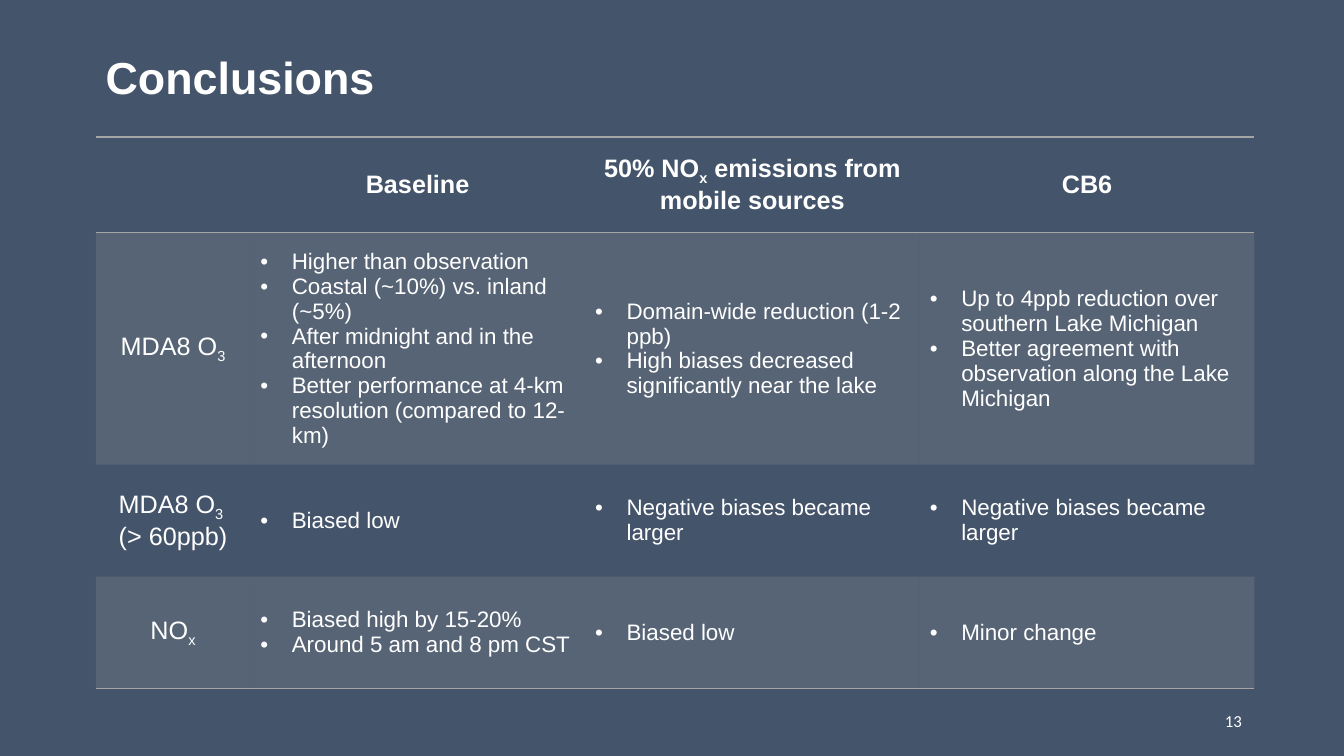
from lxml import etree
from pptx import Presentation
from pptx.dml.color import RGBColor
from pptx.enum.text import MSO_ANCHOR, PP_ALIGN
from pptx.oxml.ns import qn
from pptx.util import Pt

MIDDLE = MSO_ANCHOR.MIDDLE
LEFT, CENTER, RIGHT = PP_ALIGN.LEFT, PP_ALIGN.CENTER, PP_ALIGN.RIGHT
COLORS = {"background": "44546A", "text": "FFFFFF", "accent": "A5A5A5"}
NO_STYLE_NO_GRID = "{2D5ABB26-0587-4C30-8999-92F81FD0307C}"
BULLET_INDENT = 22.5
BAND_OPACITY = 20

COLUMN_WIDTHS = [110.4, 239.1, 239.1, 239.1]
ROW_HEIGHTS = [68.4, 165.6, 79.9, 79.9]
# Text between underscores is set as a subscript.
FINDINGS = [
    [[], ["Baseline"], ["50% NO_x_ emissions from mobile sources"], ["CB6"]],
    [
        ["MDA8 O_3_"],
        [
            "Higher than observation",
            "Coastal (~10%) vs. inland (~5%)",
            "After midnight and in the afternoon",
            "Better performance at 4-km resolution (compared to 12-km)",
        ],
        [
            "Domain-wide reduction (1-2 ppb)",
            "High biases decreased significantly near the lake",
        ],
        [
            "Up to 4ppb reduction over southern Lake Michigan",
            "Better agreement with observation along the Lake Michigan",
        ],
    ],
    [
        ["MDA8 O_3 _", "(> 60ppb)"],
        ["Biased low"],
        ["Negative biases became larger"],
        ["Negative biases became larger"],
    ],
    [
        ["NO_x_"],
        ["Biased high by 15-20%", "Around 5 am and 8 pm CST"],
        ["Biased low"],
        ["Minor change"],
    ],
]


def color(name):
    return RGBColor.from_string(COLORS[name])


def format_font(font, size, name="Arial", bold=False):
    font.size = Pt(size)
    font.name = name
    font.bold = bold
    font.color.rgb = color("text")


def add_text(slide, box, text, size, alignment=LEFT, font_name="Arial", bold=False):
    text_frame = slide.shapes.add_textbox(*map(Pt, box)).text_frame
    text_frame.word_wrap = True
    text_frame.vertical_anchor = MIDDLE
    text_frame.text = text
    paragraph = text_frame.paragraphs[0]
    paragraph.alignment = alignment
    format_font(paragraph.runs[0].font, size, font_name, bold)
    return paragraph


def add_bullet(paragraph):
    properties = paragraph._p.get_or_add_pPr()
    properties.set("marL", str(Pt(BULLET_INDENT)))
    properties.set("indent", str(-Pt(BULLET_INDENT)))
    etree.SubElement(properties, qn("a:buFont")).set("typeface", "Arial")
    etree.SubElement(properties, qn("a:buChar")).set("char", "•")


def fill_paragraph(paragraph, text, size, bold, bulleted):
    paragraph.alignment = LEFT if bulleted else CENTER
    if bulleted:
        add_bullet(paragraph)
    for index, part in enumerate(text.split("_")):
        if part:
            run = paragraph.add_run()
            run.text = part
            format_font(run.font, size, bold=bold)
            if index % 2:
                run.font._element.set("baseline", "-25000")


def add_border(cell, side):
    line = etree.SubElement(cell._tc.get_or_add_tcPr(), qn(f"a:{side}"))
    line.set("w", str(Pt(1)))
    fill = etree.SubElement(line, qn("a:solidFill"))
    etree.SubElement(fill, qn("a:srgbClr")).set("val", COLORS["accent"])


def fill_cell(cell, banded):
    if not banded:
        cell.fill.background()
        return
    cell.fill.solid()
    cell.fill.fore_color.rgb = color("accent")
    tint = cell._tc.tcPr.find(qn("a:solidFill")).find(qn("a:srgbClr"))
    etree.SubElement(tint, qn("a:alpha")).set("val", str(BAND_OPACITY * 1000))


def add_findings_table(slide, box):
    row_count, column_count = len(ROW_HEIGHTS), len(COLUMN_WIDTHS)
    table = slide.shapes.add_table(row_count, column_count, *map(Pt, box)).table
    table.horz_banding = False
    table._tbl.tblPr.find(qn("a:tableStyleId")).text = NO_STYLE_NO_GRID
    for column, width in zip(table.columns, COLUMN_WIDTHS):
        column.width = Pt(width)
    for row, height in zip(table.rows, ROW_HEIGHTS):
        row.height = Pt(height)
    for row_index, row_texts in enumerate(FINDINGS):
        header = row_index == 0
        for column_index, lines in enumerate(row_texts):
            cell = table.cell(row_index, column_index)
            cell.vertical_anchor = MIDDLE
            if header:
                add_border(cell, "lnT")
            if header or row_index == row_count - 1:
                add_border(cell, "lnB")
            fill_cell(cell, banded=row_index % 2 == 1)
            bulleted = not header and column_index > 0
            for line_index, text in enumerate(lines):
                text_frame = cell.text_frame
                paragraph = text_frame.add_paragraph() if line_index else text_frame.paragraphs[0]
                fill_paragraph(paragraph, text, 16 if bulleted else 18, header, bulleted)


def add_conclusions_slide(presentation):
    slide = presentation.slides.add_slide(presentation.slide_layouts[6])
    slide.background.fill.solid()
    slide.background.fill.fore_color.rgb = color("background")
    title = add_text(slide, (68.4, 28.1, 828, 57.6), "Conclusions", 32, bold=True)
    title.line_spacing = 0.9
    add_findings_table(slide, (68.4, 97.9, sum(COLUMN_WIDTHS), sum(ROW_HEIGHTS)))
    add_text(slide, (678.2, 500.4, 216, 28.8), "13", 12, RIGHT, "Calibri")


def main():
    presentation = Presentation()
    presentation.slide_width = Pt(960)
    presentation.slide_height = Pt(540)
    add_conclusions_slide(presentation)
    presentation.save("out.pptx")


if __name__ == "__main__":
    main()
